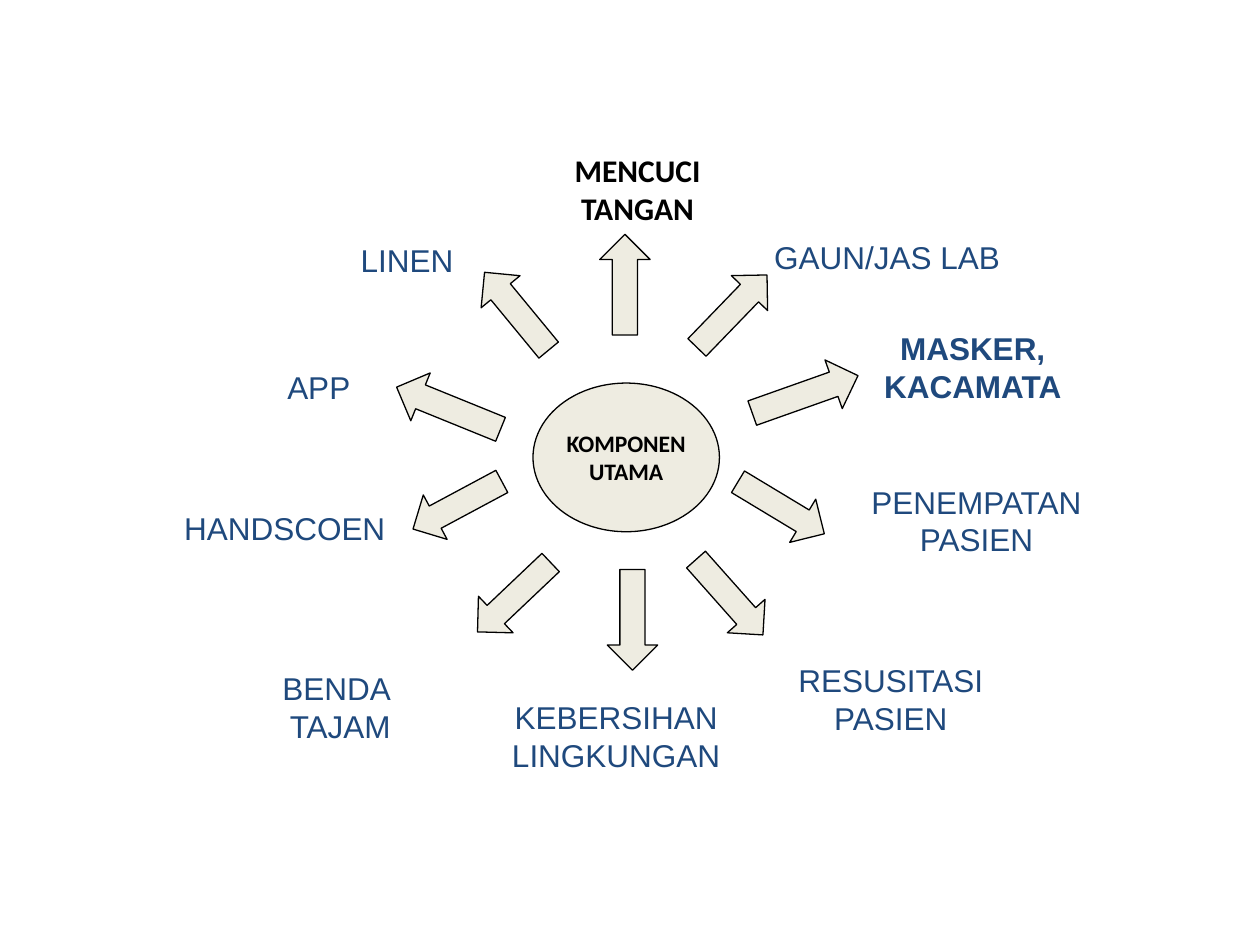
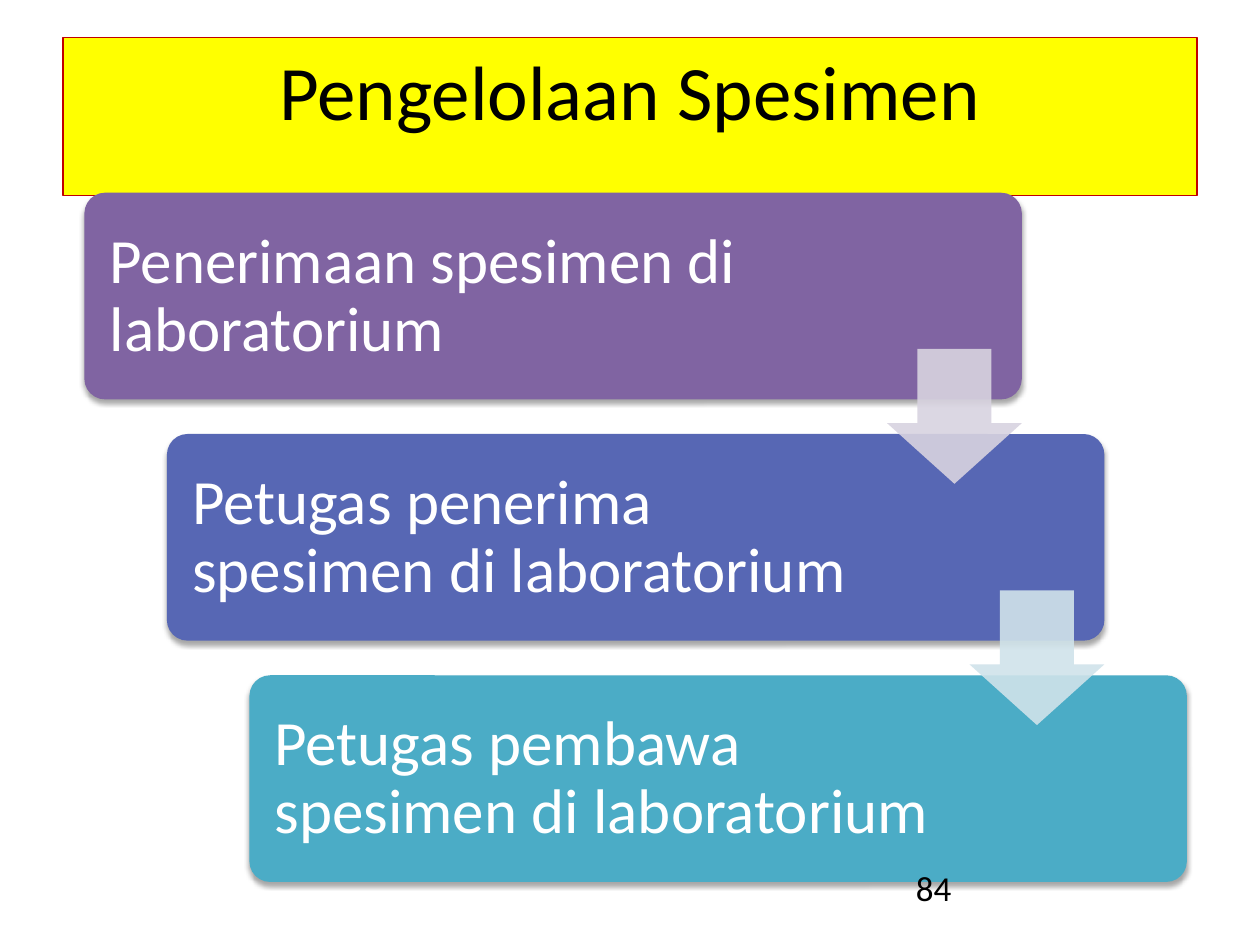
from lxml import etree
from pptx import Presentation
from pptx.dml.color import RGBColor
from pptx.enum import shapes, text
from pptx.oxml import ns
from pptx.util import Inches, Pt

COLORS = {
    "ink": "000000", "white": "FFFFFF", "navy": "1F497D", "cream": "EEECE1",
    "yellow": "FFFF00", "red": "C00000",
    "purple": "8064A2", "indigo": "5767B4", "teal": "4BACC6",
    "lilac": "D8D3E0", "mist": "D0E3EA",
}
KIND = shapes.MSO_SHAPE
MIDDLE, TOP = text.MSO_ANCHOR.MIDDLE, text.MSO_ANCHOR.TOP
CENTER, LEFT = text.PP_ALIGN.CENTER, text.PP_ALIGN.LEFT

# Text styles
LABEL = {"name": "Arial", "size": Pt(18), "bold": False, "color": "navy"}
STRONG = {**LABEL, "bold": True}
HEAD = {**STRONG, "name": "Calibri", "color": "ink"}
HUB = {**HEAD, "size": Pt(13.5)}
TITLE = {"name": "Calibri", "size": Pt(44), "color": "ink"}
STEP = {**TITLE, "size": Pt(36), "color": "white"}
NUMBER = {**TITLE, "size": Pt(20)}

# Arrows by kind: size, then centre offset from the hub and rotation
SMALL_ACROSS, LARGE_ACROSS, UPRIGHT = (0.8, 0.4), (0.89, 0.41), (0.4, 0.8)
SPOKES = [
    (KIND.LEFT_ARROW, LARGE_ACROSS, -1.41, -0.39, 22.1),
    (KIND.RIGHT_ARROW, LARGE_ACROSS, 1.42, -0.5, 340.5),
    (KIND.UP_ARROW, UPRIGHT, -0.01, -1.37, 0),
    (KIND.DOWN_ARROW, UPRIGHT, -0.89, 1.11, 46.5),
    (KIND.LEFT_ARROW, SMALL_ACROSS, -0.87, -1.16, 50.5),
    (KIND.RIGHT_ARROW, SMALL_ACROSS, 0.84, -1.16, 314),
    (KIND.DOWN_ARROW, UPRIGHT, -1.34, 0.38, 61.8),
    (KIND.DOWN_ARROW, UPRIGHT, 1.23, 0.4, 301.1),
    (KIND.DOWN_ARROW, UPRIGHT, 0.05, 1.29, 0),
    (KIND.DOWN_ARROW, UPRIGHT, 0.82, 1.11, 318.4),
]
# Labels: text, centre offset from the hub, width, style, anchor
COMPONENTS = [
    ("MENCUCI\nTANGAN", 0.09, -2.16, 2.01, HEAD, TOP),
    ("GAUN/JAS LAB", 2.07, -1.59, 2.01, LABEL, MIDDLE),
    ("LINEN", -1.74, -1.57, 2.01, LABEL, MIDDLE),
    ("HANDSCOEN", -2.71, 0.56, 2.01, LABEL, MIDDLE),
    ("MASKER, KACAMATA", 2.75, -0.72, 2.72, STRONG, MIDDLE),
    ("APP", -2.44, -0.56, 2.01, LABEL, MIDDLE),
    ("BENDA \nTAJAM", -2.27, 1.98, 2.01, LABEL, MIDDLE),
    ("KEBERSIHAN\nLINGKUNGAN", -0.08, 2.21, 2.01, LABEL, MIDDLE),
    ("RESUSITASI\nPASIEN", 2.1, 1.92, 2.01, LABEL, MIDDLE),
    ("PENEMPATAN\nPASIEN", 2.78, 0.5, 2.01, LABEL, MIDDLE),
]
STEPS = [
    ("Penerimaan spesimen di laboratorium", "purple"),
    ("Petugas penerima spesimen di laboratorium", "indigo"),
    ("Petugas pembawa spesimen di laboratorium", "teal"),
]


def rgb(name):
    return RGBColor.from_string(COLORS[name])


def write(sp, words, style, align=CENTER, anchor=MIDDLE, wrap=True, **frame):
    """Put one paragraph in a shape; a newline becomes a line break."""
    tf = sp.text_frame
    for key, value in {"word_wrap": wrap, "vertical_anchor": anchor, **frame}.items():
        setattr(tf, key, value)
    p = tf.paragraphs[0]
    p.text = words
    p.alignment = align
    for r in p.runs:
        for key, value in style.items():
            if key == "color":
                r.font.color.rgb = rgb(value)
            else:
                setattr(r.font, key, value)
    return p


def add_box(slide, kind, box, fill, line=None, adj=()):
    sp = slide.shapes.add_shape(kind, *map(Inches, box))
    sp.shadow.inherit = False
    sp.fill.solid()
    sp.fill.fore_color.rgb = rgb(fill)
    if line:
        sp.line.color.rgb = rgb(line)
        sp.line.width = Pt(0.75)
    else:
        sp.line.fill.background()
    for i, value in enumerate(adj):
        sp.adjustments[i] = value
    return sp


def add_text(slide, box, words, style, **frame):
    return write(slide.shapes.add_textbox(*map(Inches, box)), words, style, **frame)


def centred(cx, cy, w, h):
    return cx - w / 2, cy - h / 2, w, h


def set_alpha(color, percent):
    etree.SubElement(color, ns.qn("a:alpha"), val=str(percent * 1000))


def add_shadow(sp):
    effects = sp._element.spPr.find(ns.qn("a:effectLst"))
    shadow = etree.SubElement(effects, ns.qn("a:outerShdw"), blurRad=str(Pt(3.1)),
                              dist=str(Pt(1.8)), dir="5400000", rotWithShape="0")
    color = etree.SubElement(shadow, ns.qn("a:srgbClr"), val=COLORS["ink"])
    set_alpha(color, 35)


def component_wheel(slide, cx, cy):
    # Hub
    hub = add_box(slide, KIND.OVAL, centred(cx, cy, 1.48, 1.18), "cream", "ink")
    write(hub, "KOMPONEN\nUTAMA", HUB, wrap=False)
    # Spokes
    for kind, size, dx, dy, angle in SPOKES:
        box = centred(cx + dx, cy + dy, *size)
        add_box(slide, kind, box, "cream", "ink", (0.5, 0.5)).rotation = angle
    # Labels
    for words, dx, dy, w, style, anchor in COMPONENTS:
        add_text(slide, centred(cx + dx, cy + dy, w, 0.64), words, style, anchor=anchor)


def title_band(slide, box, words):
    write(add_box(slide, KIND.RECTANGLE, box, "yellow", "red"), words, TITLE, anchor=TOP)


def step_cascade(slide, x, y, w=7.44, h=1.64, dx=0.655, dy=1.915):
    insets = {f"margin_{side}": Inches(0.15) for side in ("left", "top", "right", "bottom")}
    # Steps
    for i, (words, fill) in enumerate(STEPS):
        left, top = x + i * dx, y + i * dy
        add_shadow(add_box(slide, KIND.ROUNDED_RECTANGLE, (left, top, w, h), fill, adj=[0.1]))
        p = add_text(slide, (left + 0.05, top + 0.05, 5.64, 1.55), words, STEP,
                     align=LEFT, **insets)
        p.line_spacing = 0.9
    # Arrows, flush with the right edge of the step they leave
    side = 1.07
    for i, fill in enumerate(("lilac", "mist")):
        box = (x + i * dx + w - side, y + i * dy + 1.24, side, side)
        arrow = add_box(slide, KIND.DOWN_ARROW, box, fill, adj=(0.55, 0.45))
        set_alpha(arrow._element.spPr.find(".//" + ns.qn("a:srgbClr")), 90)


def main():
    prs = Presentation()
    prs.slide_width, prs.slide_height = Inches(10), Inches(7.5)
    wheel, handling = (prs.slides.add_slide(prs.slide_layouts[6]) for _ in range(2))

    component_wheel(wheel, 4.97, 3.63)

    title_band(handling, (0.5, 0.3, 9, 1.25), "Pengelolaan Spesimen")
    step_cascade(handling, 0.67, 1.53)
    add_text(handling, (7.17, 6.83, 2.33, 0.52), "84", NUMBER, align=LEFT, anchor=TOP)

    prs.save("out.pptx")


if __name__ == "__main__":
    main()
